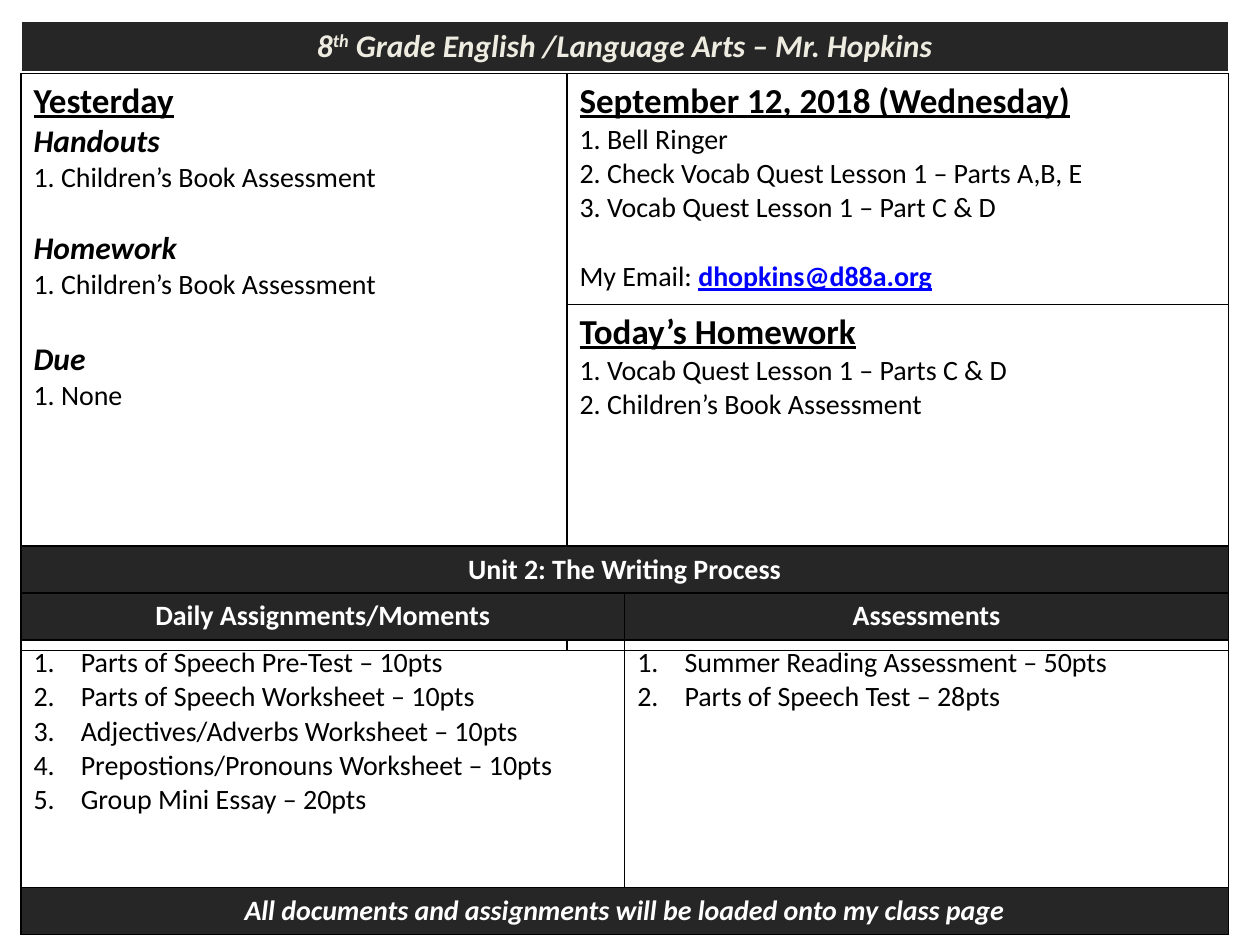
from pptx import Presentation
from pptx.dml.color import RGBColor
from pptx.enum import text
from pptx.oxml import parse_xml
from pptx.oxml.ns import nsdecls
from pptx.util import Pt

COLORS = {"ink": "000000", "dark": "262626", "cream": "EEECE1", "white": "FFFFFF", "link": "0000FF"}
FONT = "Calibri"
LEFT, WIDTH = 12, 690

# size, colour, bold, italic, underline
STYLES = {
    "title": (18, "cream", True, True, False),
    "heading": (20, "ink", True, False, True),
    "subheading": (18, "ink", True, True, False),
    "body": (16, "ink", False, False, False),
    "email": (16, "link", True, False, True),
    "band": (16, "white", True, False, False),
    "footer": (16, "white", True, True, False),
}


def add_table(s, top, cols, rows, border=True):
    """Add an unbanded, unfilled table, with a black grid if border is set."""
    frame = s.shapes.add_table(len(rows), len(cols), Pt(LEFT), Pt(top), Pt(sum(cols)), Pt(sum(rows)))
    table = frame.table
    table.first_row = table.horz_banding = False
    for col, width in zip(table.columns, cols):
        col.width = Pt(width)
    for row, height in zip(table.rows, rows):
        row.height = Pt(height)
    for cell in table.iter_cells():
        if border:
            add_borders(cell)
        cell.fill.background()
    return table


def add_borders(cell):
    tcPr = cell._tc.get_or_add_tcPr()
    for side in "LRTB":
        tcPr.append(parse_xml(
            f'<a:ln{side} {nsdecls("a")} w="{Pt(1)}"><a:solidFill>'
            f'<a:srgbClr val="{COLORS["ink"]}"/></a:solidFill></a:ln{side}>'))


def add_run(p, words, style):
    size, color, bold, italic, underline = STYLES[style]
    r = p.add_run()
    r.text = words
    font = r.font
    font.name, font.size = FONT, Pt(size)
    font.bold, font.italic, font.underline = bold, italic, underline
    font.color.rgb = RGBColor.from_string(COLORS[color])
    return r


def add_line(cell, words, style="body", before=0):
    """Write the next paragraph of a cell, using the empty first one if it is free."""
    tf = cell.text_frame
    p = tf.paragraphs[0] if not tf.text else tf.add_paragraph()
    if before:
        p.space_before = Pt(before)
    add_run(p, words, style)
    return p


def add_lines(cell, lines):
    for line in lines:
        add_line(cell, line)


def add_numbered(cell, lines):
    for line in lines:
        pPr = add_line(cell, line)._p.get_or_add_pPr()
        pPr.set("marL", str(Pt(27)))
        pPr.set("indent", str(Pt(-27)))
        pPr.append(parse_xml(f'<a:buFont {nsdecls("a")} typeface="+mj-lt"/>'))
        pPr.append(parse_xml(f'<a:buAutoNum {nsdecls("a")} type="arabicPeriod"/>'))


def add_band(cell, words, style="band"):
    """Write a centred line on a dark cell."""
    cell.fill.solid()
    cell.fill.fore_color.rgb = RGBColor.from_string(COLORS["dark"])
    p = add_line(cell, words, style)
    p.alignment = text.PP_ALIGN.CENTER
    return p


def add_agenda(s):
    table = add_table(s, 42, [312, 378], [132, 132])
    yesterday, today, homework = table.cell(0, 0), table.cell(0, 1), table.cell(1, 1)
    yesterday.merge(table.cell(1, 0))

    add_line(yesterday, "Yesterday", "heading")
    for name, item, gap in [
        ("Handouts", "1. Children’s Book Assessment", 0),
        ("Homework", "1. Children’s Book Assessment", 19.5),
        ("Due", "1. None", 22),
    ]:
        add_line(yesterday, name, "subheading", gap)
        add_line(yesterday, item)

    add_line(today, "September 12, 2018 (Wednesday)", "heading")
    add_lines(today, [
        "1. Bell Ringer",
        "2. Check Vocab Quest Lesson 1 – Parts A,B, E",
        "3. Vocab Quest Lesson 1 – Part C & D",
    ])
    add_run(add_line(today, "My Email: ", before=19.5), "dhopkins@d88a.org", "email")

    add_line(homework, "Today’s Homework", "heading")
    add_lines(homework, [
        "1. Vocab Quest Lesson 1 – Parts C & D",
        "2. Children’s Book Assessment",
    ])


def add_title(s):
    table = add_table(s, 12, [WIDTH], [29.2], border=False)
    p = add_band(table.cell(0, 0), "8", "title")
    ordinal = add_run(p, "th", "title")
    ordinal._r.get_or_add_rPr().set("baseline", "30000")
    add_run(p, " Grade English /Language Arts – Mr. Hopkins", "title")


def add_unit(s):
    table = add_table(s, 312, [WIDTH / 2] * 2, [26.7, 26.7, 141.6, 26.7])
    for row in (0, 3):
        table.cell(row, 0).merge(table.cell(row, 1))
    add_band(table.cell(0, 0), "Unit 2: The Writing Process")
    add_band(table.cell(1, 0), "Daily Assignments/Moments")
    add_band(table.cell(1, 1), "Assessments")
    add_numbered(table.cell(2, 0), [
        "Parts of Speech Pre-Test – 10pts",
        "Parts of Speech Worksheet – 10pts",
        "Adjectives/Adverbs Worksheet – 10pts",
        "Prepostions/Pronouns Worksheet – 10pts",
        "Group Mini Essay – 20pts",
    ])
    add_numbered(table.cell(2, 1), [
        "Summer Reading Assessment – 50pts",
        "Parts of Speech Test – 28pts",
    ])
    add_band(table.cell(3, 0), "All documents and assignments will be loaded onto my class page", "footer")


def main():
    prs = Presentation()
    prs.slide_width, prs.slide_height = Pt(720), Pt(540)
    s = prs.slides.add_slide(prs.slide_layouts[6])
    add_agenda(s)
    add_title(s)
    add_unit(s)
    prs.save("out.pptx")


if __name__ == "__main__":
    main()
